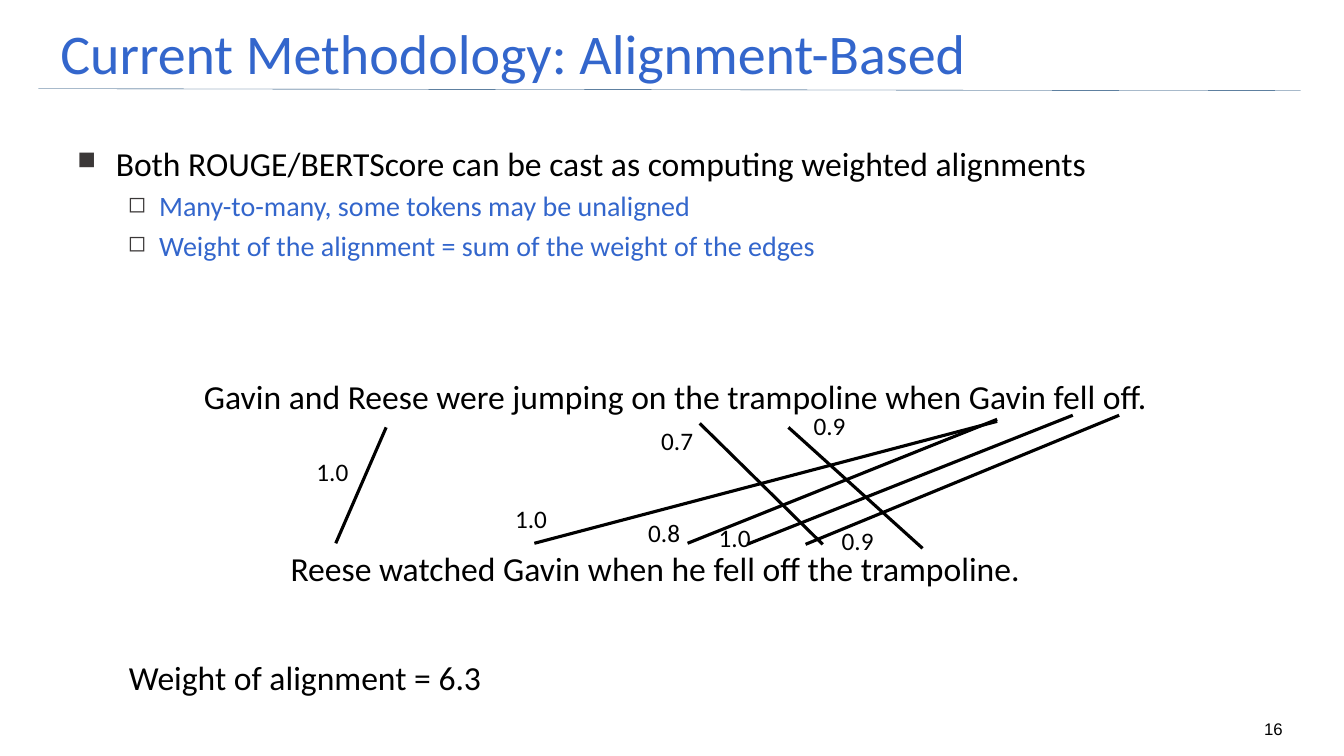
from lxml import etree
from pptx import Presentation
from pptx.dml.color import RGBColor
from pptx.enum.shapes import MSO_CONNECTOR
from pptx.enum.text import MSO_ANCHOR, PP_ALIGN
from pptx.oxml.ns import qn
from pptx.util import Inches, Pt

STRAIGHT = MSO_CONNECTOR.STRAIGHT
LEFT, CENTER = PP_ALIGN.LEFT, PP_ALIGN.CENTER
TOP, MIDDLE, BOTTOM = MSO_ANCHOR.TOP, MSO_ANCHOR.MIDDLE, MSO_ANCHOR.BOTTOM
COLORS = {"text": "000000", "accent": "3366CC", "bullet": "3B3838", "rule": "093D6E"}

presentation = Presentation()
presentation.slide_width = Inches(13.33)
presentation.slide_height = Inches(7.5)
slide = presentation.slides.add_slide(presentation.slide_layouts[6])


def add_text(box, lines, size, color="text", font="Calibri", align=LEFT, anchor=TOP, wrap=True):
    """Add a text box with one paragraph per line and return its paragraphs."""
    frame = slide.shapes.add_textbox(*map(Inches, box)).text_frame
    frame.word_wrap = wrap
    frame.vertical_anchor = anchor
    frame.text = "\n".join(lines)
    for paragraph in frame.paragraphs:
        paragraph.alignment = align
        paragraph.font.name = font
        paragraph.font.size = Pt(size)
        paragraph.font.color.rgb = RGBColor.from_string(COLORS[color])
    return frame.paragraphs


def add_line(start, end, color, width):
    line = slide.shapes.add_connector(STRAIGHT, *map(Inches, start + end))
    line.line.color.rgb = RGBColor.from_string(COLORS[color])
    line.line.width = Pt(width)
    etree.SubElement(line._element.spPr, qn("a:effectLst"))


# Title and rule
add_line((0.38, 0.88), (12.9, 0.9), "rule", 0.25)
add_text((0.5, 0.23, 10.81, 0.58), ["Current Methodology: Alignment-Based"], 40, "accent", anchor=MIDDLE)

# Bullets: symbol, symbol size in percent, indent, level, text size, colour, space before
MAIN = ("■", 75, 0.38, -0.38, 0, 24, "text", 0)
SUB = ("◻", 80, 0.81, -0.31, 1, 20, "accent", 4)
bullets = [
    ("Both ROUGE/BERTScore can be cast as computing weighted alignments", MAIN),
    ("Many-to-many, some tokens may be unaligned", SUB),
    ("Weight of the alignment = sum of the weight of the edges", SUB),
]
paragraphs = add_text((0.67, 1.37, 12, 4.9), [text for text, style in bullets], 24)
for paragraph, (text, style) in zip(paragraphs, bullets):
    symbol, percent, margin, indent, level, size, color, space = style
    paragraph.level = level
    paragraph.space_before = Pt(space)
    paragraph.font.size = Pt(size)
    paragraph.font.color.rgb = RGBColor.from_string(COLORS[color])
    properties = paragraph._p.get_or_add_pPr()
    properties.set("marL", str(Inches(margin)))
    properties.set("indent", str(Inches(indent)))
    bullet_color = etree.Element(qn("a:buClr"))
    etree.SubElement(bullet_color, qn("a:srgbClr"), val=COLORS["bullet"])
    bullet_size = etree.Element(qn("a:buSzPct"), val=str(percent * 1000))
    bullet_symbol = etree.Element(qn("a:buChar"), char=symbol)
    for element in (bullet_color, bullet_size, bullet_symbol):
        properties.find(qn("a:defRPr")).addprevious(element)

# Sentences
add_text((1.92, 3.68, 9.56, 0.5),
         ["Gavin and Reese were jumping on the trampoline when Gavin fell off."], 24, align=CENTER)
add_text((1.72, 5.39, 9.56, 0.5),
         ["Reese watched Gavin when he fell off the trampoline."], 24, align=CENTER)

# Alignment edges: upper token, lower token, weight, weight position
edges = [
    ((3.83, 4.24), (3.33, 5.39), "1.0", (3.04, 4.48)),
    ((9.89, 4.18), (5.3, 5.39), "1.0", (5.01, 4.94)),
    ((9.89, 4.16), (6.82, 5.39), "0.8", (6.33, 5.08)),
    ((10.64, 4.12), (7.41, 5.4), "1.0", (7.03, 5.13)),
    ((11.1, 4.12), (7.99, 5.4), "0.9", (8.25, 5.16)),
    ((6.94, 4.2), (8.16, 5.4), "0.7", (6.46, 4.17)),
    ((7.82, 4.24), (9.15, 5.44), "0.9", (7.97, 4.02)),
]
for upper, lower, weight, position in edges:
    add_line(upper, lower, "text", 2.25)
    add_text(position + (0.52, 0.4), [weight], 18, wrap=False)

# Total and page number
add_text((1.18, 6.47, 3.73, 0.5), ["Weight of alignment = 6.3"], 24, wrap=False)
add_text((12.35, 7.13, 0.56, 0.25), ["16"], 12, font="Arial", align=CENTER, anchor=BOTTOM)

presentation.save("out.pptx")
